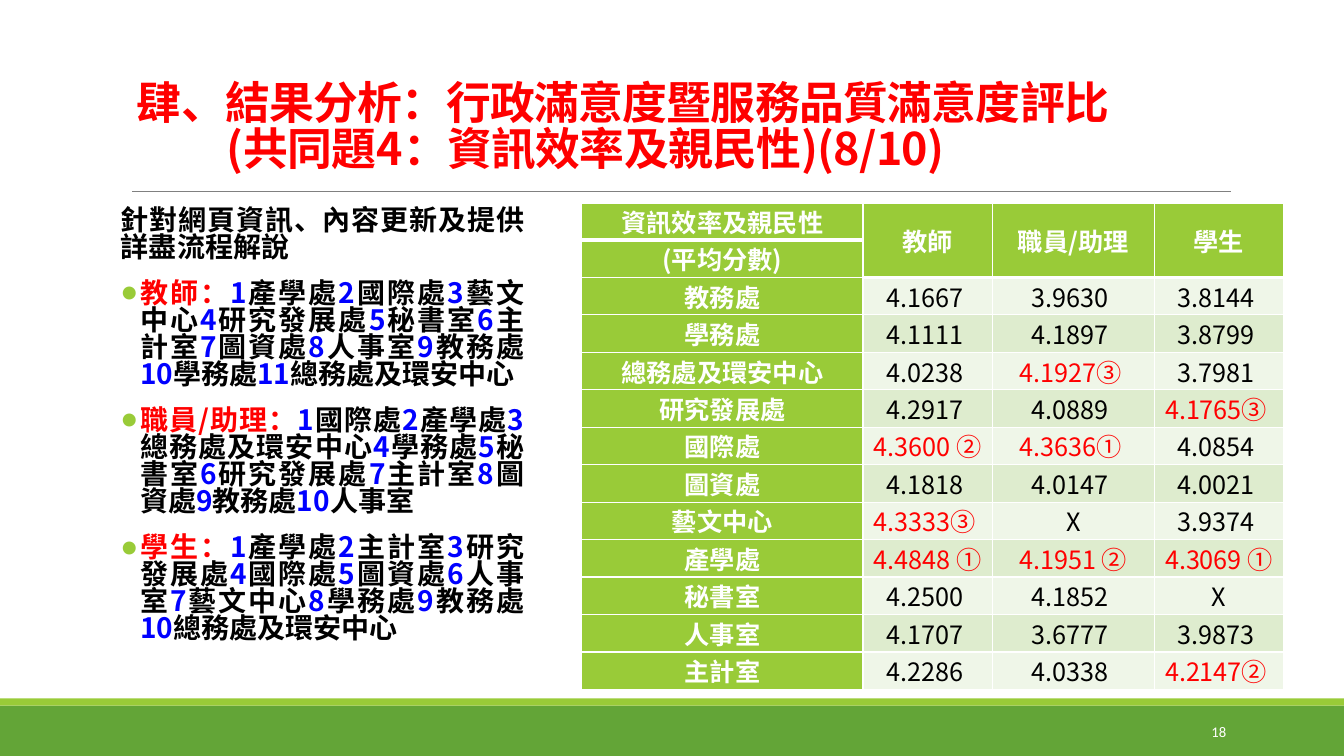
from lxml import etree
from pptx import Presentation
from pptx.dml.color import RGBColor
from pptx.enum.shapes import MSO_CONNECTOR, MSO_SHAPE
from pptx.enum.text import MSO_ANCHOR, PP_ALIGN
from pptx.oxml.ns import qn
from pptx.util import Inches, Pt

CJK = "Noto Sans CJK SC"
LIME, GREEN, RED, BLUE, BLACK, WHITE = (
    "99CB38", "63A537", "FF0000", "0000FF", "000000", "FFFFFF")
BANDS = ("EFF6E8", "DEECCE")

TITLE = ("肆、結果分析：行政滿意度暨服務品質滿意度評比",
         "(共同題4：資訊效率及親民性)(8/10)")
INTRO = "針對網頁資訊、內容更新及提供詳盡流程解說"
RANKINGS = {
    "教師：": "產學處 國際處 藝文中心 研究發展處 秘書室 主計室 圖資處 人事室 教務處 學務處 總務處及環安中心",
    "職員/助理：": "國際處 產學處 總務處及環安中心 學務處 秘書室 研究發展處 主計室 圖資處 教務處 人事室",
    "學生：": "產學處 主計室 研究發展處 國際處 圖資處 人事室 藝文中心 學務處 教務處 總務處及環安中心",
}
SCORES = [
    ("資訊效率及親民性", "教師", "職員/助理", "學生"),
    ("(平均分數)", "", "", ""),
    ("教務處", "4.1667 ", "3.9630 ", "3.8144 "),
    ("學務處", "4.1111 ", "4.1897 ", "3.8799 "),
    ("總務處及環安中心", "4.0238 ", "4.1927③ ", "3.7981 "),
    ("研究發展處", "4.2917 ", "4.0889 ", "4.1765③ "),
    ("國際處", "4.3600 ②", "4.3636① ", "4.0854 "),
    ("圖資處", "4.1818 ", "4.0147 ", "4.0021 "),
    ("藝文中心", "4.3333③ ", "X", "3.9374 "),
    ("產學處", "4.4848 ①", "4.1951 ②", "4.3069 ①"),
    ("秘書室", "4.2500 ", "4.1852 ", "X"),
    ("人事室", "4.1707 ", "3.6777 ", "3.9873 "),
    ("主計室", "4.2286 ", "4.0338 ", "4.2147② "),
]


def rgb(color):
    return RGBColor.from_string(color)


def add_run(p, text, size, color, bold=False, font=CJK):
    r = p.add_run()
    r.text = text
    r.font.size, r.font.bold, r.font.name = Pt(size), bold, font
    r.font.color.rgb = rgb(color)
    etree.SubElement(r.font._element, qn("a:ea")).set("typeface", font)
    return r


def add_text(s, x, y, w, h, anchor, inset=0.1):
    tf = s.shapes.add_textbox(Inches(x), Inches(y), Inches(w), Inches(h)).text_frame
    tf.word_wrap = True
    tf.vertical_anchor = anchor
    tf.margin_left = tf.margin_right = Inches(inset)
    return tf


def hang(p, indent):
    pPr = p._p.get_or_add_pPr()
    pPr.set("marL", str(Inches(indent)))
    pPr.set("indent", str(-Inches(indent)))
    return pPr


def add_bullet(p):
    pPr = hang(p, 0.19)
    color = etree.SubElement(pPr, qn("a:buClr"))
    etree.SubElement(color, qn("a:srgbClr")).set("val", LIME)
    etree.SubElement(pPr, qn("a:buFont")).set("typeface", "Calibri")
    etree.SubElement(pPr, qn("a:buChar")).set("char", "●")


def add_footer(s, x, y, w, h):
    # Thin lime strip above the green band
    strip = 0.07
    for top, height, color in ((y + strip, h - strip, GREEN), (y, strip, LIME)):
        bar = s.shapes.add_shape(MSO_SHAPE.RECTANGLE, Inches(x), Inches(top),
                                 Inches(w), Inches(height))
        bar.shadow.inherit = False
        bar.fill.solid()
        bar.fill.fore_color.rgb = rgb(color)
        bar.line.fill.background()
    # Page number
    p = add_text(s, x + w - 2.5, y + 0.13, 1.43, 0.4, MSO_ANCHOR.MIDDLE).paragraphs[0]
    p.alignment = PP_ALIGN.RIGHT
    add_run(p, "18", 10.5, WHITE, font="Calibri")


def add_title(s, x, y, w, h):
    p = add_text(s, x, y, w, h, MSO_ANCHOR.BOTTOM).paragraphs[0]
    p.line_spacing = 0.85
    hang(p, 0.89)
    for i, line in enumerate(TITLE):
        if i:
            p.add_line_break()
        add_run(p, line, 32, RED, True).font._element.set("spc", "-50")
    # Rule under the title
    rule_y = Inches(y + h + 0.12)
    rule = s.shapes.add_connector(MSO_CONNECTOR.STRAIGHT, Inches(x + 0.05), rule_y,
                                  Inches(x + 10.95), rule_y)
    rule.line.color.rgb = rgb("808080")
    rule.line.width = Pt(0.5)
    etree.SubElement(rule._element.spPr, qn("a:effectLst"))


def add_rankings(s, x, y, w, h):
    tf = add_text(s, x, y, w, h, MSO_ANCHOR.TOP, inset=0)
    add_run(tf.paragraphs[0], INTRO, 20, BLACK, True)
    for group, offices in RANKINGS.items():
        p = tf.add_paragraph()
        add_bullet(p)
        add_run(p, group, 20, RED, True)
        for rank, office in enumerate(offices.split(), 1):
            add_run(p, str(rank), 20, BLUE, True)
            add_run(p, office, 20, BLACK, True)
    for p in tf.paragraphs:
        p.alignment = PP_ALIGN.JUSTIFY
        p.line_spacing = 0.8
        p.space_before, p.space_after = Pt(12), Pt(2)


def set_borders(cell, top, bottom):
    tcPr = cell._tc.get_or_add_tcPr()
    sides = (("L", 1), ("R", 1), ("T", top), ("B", bottom))
    for i, (side, width) in enumerate(sides):
        ln = etree.Element(qn(f"a:ln{side}"), w=str(Pt(width)))
        fill = etree.SubElement(ln, qn("a:solidFill"))
        etree.SubElement(fill, qn("a:srgbClr")).set("val", WHITE)
        tcPr.insert(i, ln)


def add_scores(s, x, y, w, h):
    widths = (2.79, 1.28, 1.61, 1.28)
    first = 0.36
    table = s.shapes.add_table(len(SCORES), len(widths), Inches(x), Inches(y),
                               Inches(w), Inches(h)).table
    for column, width in zip(table.columns, widths):
        column.width = Inches(width)
    for i, row in enumerate(table.rows):
        row.height = Inches((h - first) / (len(SCORES) - 1) if i else first)
    for i, values in enumerate(SCORES):
        for j, value in enumerate(values):
            cell = table.cell(i, j)
            head = i < 2 or j == 0
            cell.fill.solid()
            cell.fill.fore_color.rgb = rgb(LIME if head else BANDS[i % 2])
            cell.vertical_anchor = MSO_ANCHOR.MIDDLE
            cell.margin_left = cell.margin_right = Inches(0.02)
            cell.margin_top = cell.margin_bottom = 0
            # Heavy line closes each header cell
            header_end = 0 if j == 0 else 1
            set_borders(cell, 3 if i == header_end + 1 else 1,
                        3 if i in (0, header_end) else 1)
            p = cell.text_frame.paragraphs[0]
            p.alignment = PP_ALIGN.CENTER
            # Top three scores in red
            ranked = any(mark in value for mark in "①②③")
            if value:
                add_run(p, value, 18, WHITE if head else RED if ranked else BLACK, head)
    for j in range(1, len(widths)):
        table.cell(0, j).merge(table.cell(1, j))


def main():
    prs = Presentation()
    prs.slide_width, prs.slide_height = Inches(13.33), Inches(7.5)
    s = prs.slides.add_slide(prs.slide_layouts[6])
    add_footer(s, 0, 6.93, 13.33, 0.57)
    add_title(s, 1.26, 0.33, 11.33, 1.45)
    add_rankings(s, 1.2, 2.02, 4, 4.82)
    add_scores(s, 5.77, 2.02, 6.97, 4.82)
    prs.save("out.pptx")


if __name__ == "__main__":
    main()
